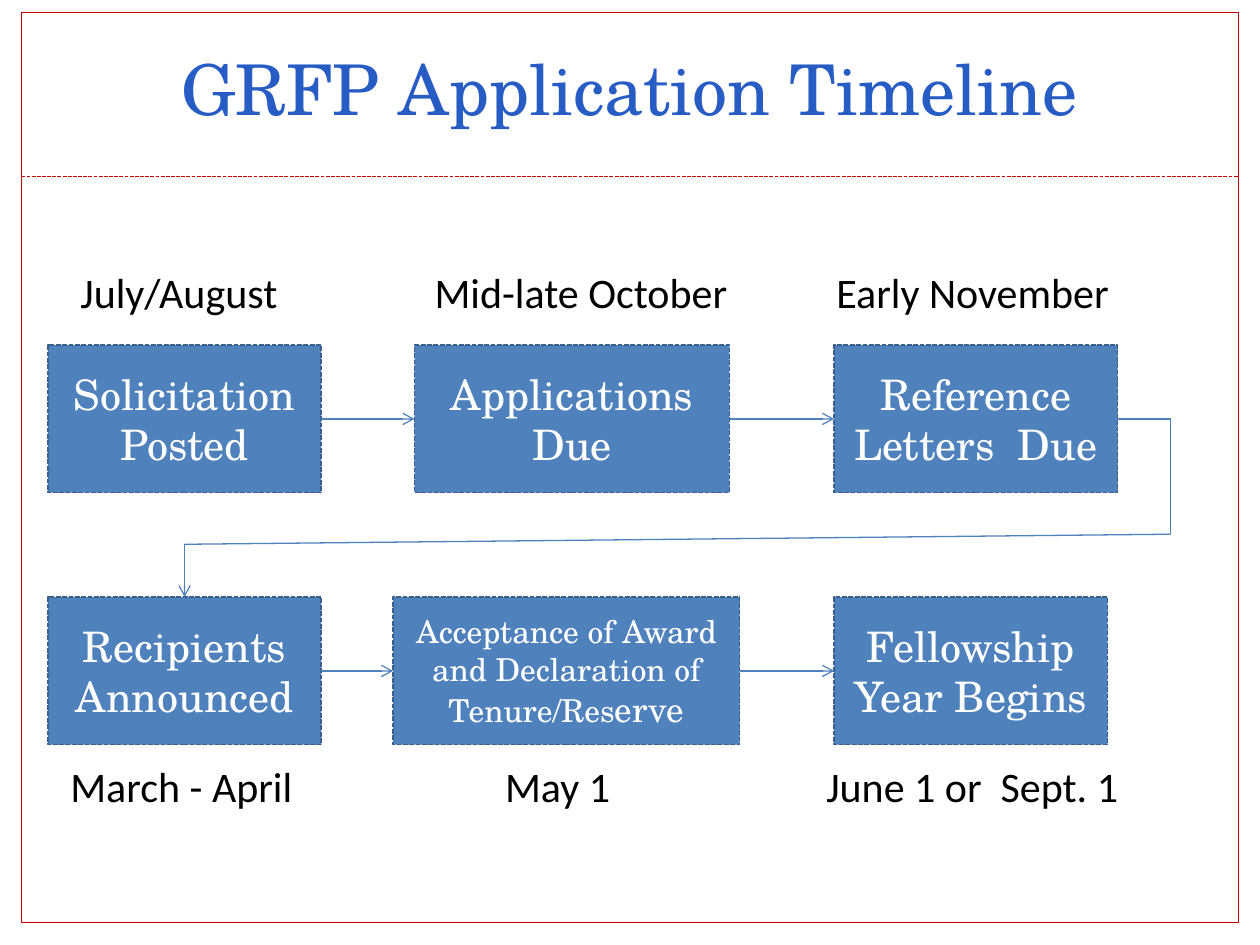
from itertools import pairwise

from pptx import Presentation
from pptx.dml.color import RGBColor
from pptx.enum.dml import MSO_LINE
from pptx.enum.shapes import MSO_CONNECTOR, MSO_SHAPE
from pptx.enum.text import MSO_ANCHOR, MSO_AUTO_SIZE, PP_ALIGN
from pptx.oxml.ns import qn
from pptx.util import Inches, Pt
from lxml.etree import SubElement

THEME = {
    "serif": "TeX Gyre Schola", "sans": "Calibri",
    "title": "285CC5", "frame": "C70000", "step": "4F81BD",
    "step_line": "3A5F8C", "white": "FFFFFF", "black": "000000",
    "title_size": 40, "text_size": 24, "small_size": 18, "small_end_size": 20,
    "thin": 0.75, "outline": 0.9,
}

TITLE = "GRFP Application Timeline"
STEP_HEIGHT = 1.17
LABEL_HEIGHT = 0.5

# Each step: runs of (text, size), left, width, date, date left, date width
ROWS = [
    {"top": 2.74, "label_top": 2.07, "steps": [
        ([("Solicitation Posted", "text_size")], 0.38, 2.17,
         "July/August", 0.54, 1.83),
        ([("Applications Due", "text_size")], 3.29, 2.5,
         "Mid-late October", 3.35, 3.25),
        ([("Reference Letters  Due", "text_size")], 6.62, 2.25,
         "Early November", 6.54, 2.67)]},
    {"top": 4.74, "label_top": 5.99, "steps": [
        ([("Recipients Announced", "text_size")], 0.38, 2.17,
         "March - April", 0.46, 3.42),
        ([("Acceptance of Award and Declaration of Tenure/Res", "small_size"),
          ("erve", "small_end_size")], 3.12, 2.75, "May 1", 3.91, 2.05),
        ([("Fellowship Year Begins", "text_size")], 6.62, 2.17,
         "June 1 or  Sept. 1", 6.46, 3.17)]},
]


def color(name):
    return RGBColor.from_string(THEME[name])


def style_font(font, face, size, color_name):
    font.name = THEME[face]
    font.size = Pt(THEME[size])
    font.color.rgb = color(color_name)


def style_line(line, color_name, width="thin", dashed=False):
    line.color.rgb = color(color_name)
    line.width = Pt(THEME[width])
    if dashed:
        line.dash_style = MSO_LINE.SQUARE_DOT


def add_box(slide, left, top, width, height):
    box = slide.shapes.add_shape(
        MSO_SHAPE.RECTANGLE, *map(Inches, (left, top, width, height)))
    box.shadow.inherit = False
    return box


def add_line(slide, start, end, color_name="step", dashed=False, arrow=False):
    line = slide.shapes.add_connector(
        MSO_CONNECTOR.STRAIGHT, *map(Inches, (*start, *end)))
    style_line(line.line, color_name, dashed=dashed)
    if arrow:
        SubElement(line.line._get_or_add_ln(), qn("a:tailEnd"), type="arrow")
    SubElement(line._element.spPr, qn("a:effectLst"))


def add_step(slide, runs, left, top, width):
    box = add_box(slide, left, top, width, STEP_HEIGHT)
    box.fill.solid()
    box.fill.fore_color.rgb = color("step")
    style_line(box.line, "step_line", "outline", dashed=True)
    frame = box.text_frame
    frame.word_wrap = True
    frame.vertical_anchor = MSO_ANCHOR.MIDDLE
    para = frame.paragraphs[0]
    para.alignment = PP_ALIGN.CENTER
    for text, size in runs:
        span = para.add_run()
        span.text = text
        style_font(span.font, "serif", size, "white")


def add_date(slide, text, left, top, width):
    box = slide.shapes.add_textbox(
        *map(Inches, (left, top, width, LABEL_HEIGHT)))
    frame = box.text_frame
    frame.word_wrap = True
    frame.auto_size = MSO_AUTO_SIZE.SHAPE_TO_FIT_TEXT
    frame.text = text
    style_font(frame.paragraphs[0].runs[0].font, "sans", "text_size", "black")


def add_title(slide):
    title = slide.shapes.title
    title.left, title.top, title.width, title.height = map(
        Inches, (0.33, -0.17, 9.33, 1.25))
    frame = title.text_frame
    frame.text = TITLE
    frame.word_wrap = True
    frame.auto_size = MSO_AUTO_SIZE.NONE
    frame.vertical_anchor = MSO_ANCHOR.BOTTOM
    para = frame.paragraphs[0]
    para.alignment = PP_ALIGN.CENTER
    style_font(para.runs[0].font, "serif", "title_size", "title")


def add_row(slide, row):
    middle = row["top"] + STEP_HEIGHT / 2
    for runs, left, width, date, date_left, date_width in row["steps"]:
        add_step(slide, runs, left, row["top"], width)
        add_date(slide, date, date_left, row["label_top"], date_width)
    for before, after in pairwise(row["steps"]):
        add_line(slide, (before[1] + before[2], middle), (after[1], middle),
                 arrow=True)


def add_return_path(slide, upper, lower):
    """Lead from the last step of one row to the first step of the next."""
    last, first = upper["steps"][-1], lower["steps"][0]
    middle = upper["top"] + STEP_HEIGHT / 2
    turn = 9.29
    entry = first[1] + first[2] / 2
    points = [(last[1] + last[2], middle), (turn, middle), (turn, 4.24),
              (entry, 4.32), (entry, lower["top"])]
    for start, end in pairwise(points):
        add_line(slide, start, end, arrow=end == points[-1])


def main():
    deck = Presentation()
    deck.slide_width, deck.slide_height = Inches(10), Inches(7.5)
    slide = deck.slides.add_slide(deck.slide_layouts[5])
    border = add_box(slide, 0.17, 0.1, 9.66, 7.22)
    border.fill.background()
    style_line(border.line, "frame")
    add_line(slide, (0.17, 1.4), (9.83, 1.4), "frame", dashed=True)
    add_title(slide)
    for row in ROWS:
        add_row(slide, row)
    add_return_path(slide, *ROWS)
    deck.save("out.pptx")


if __name__ == "__main__":
    main()
